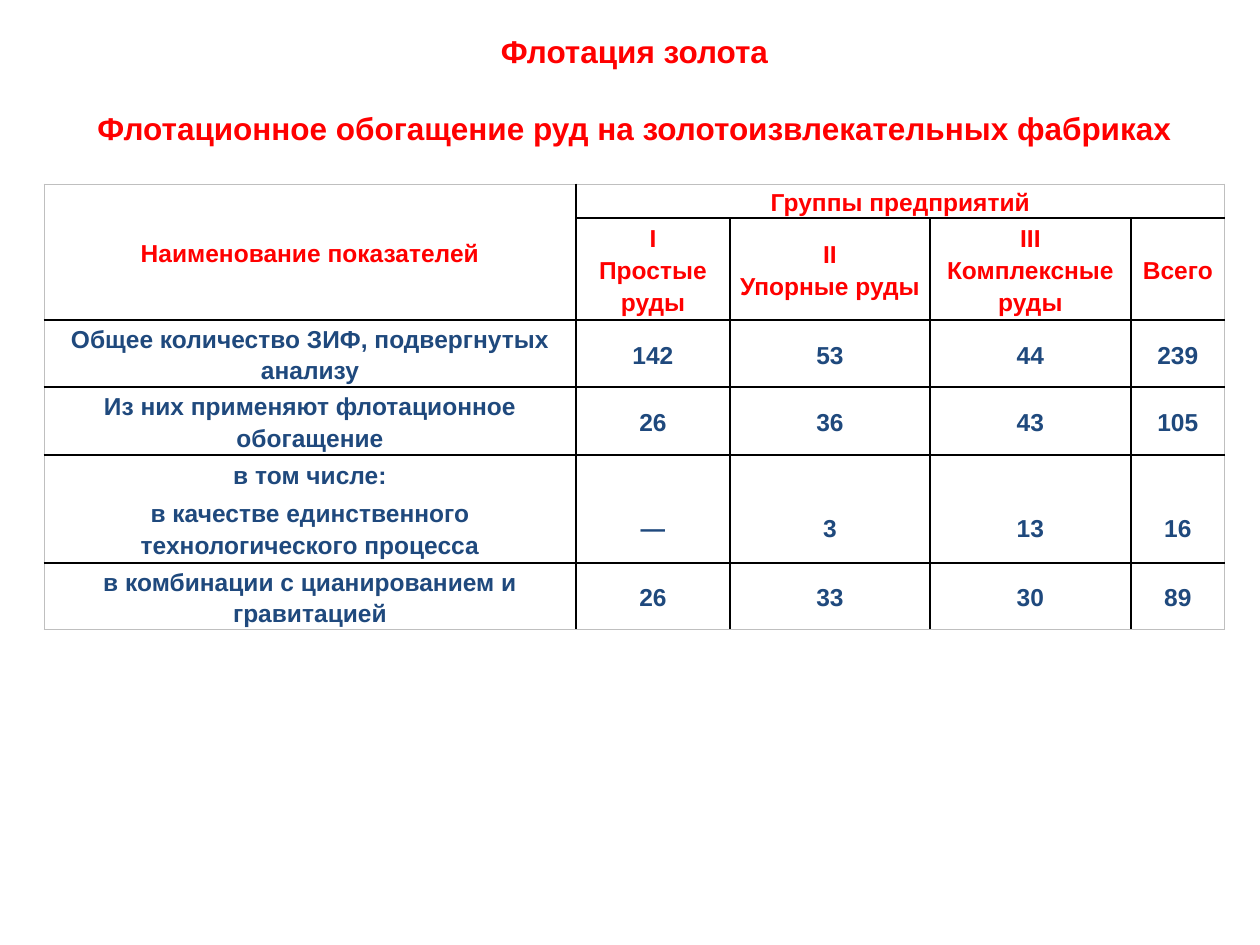
from lxml import etree
from pptx import Presentation
from pptx import util as u
from pptx.dml import color
from pptx.enum import text
from pptx.oxml import ns

PX = 914400 / 126
RED, BLUE, BLACK, GREY = "FF0000", "1F497D", "000000", "BFBFBF"


def px(n):
    return u.Emu(round(n * PX))


def write(frame, lines, size=14, tint=BLUE, lead=1.0, before=0, after=0):
    frame.text = lines[0]
    for line in lines[1:]:
        frame.add_paragraph().text = line
    for i, par in enumerate(frame.paragraphs):
        par.alignment = text.PP_ALIGN.CENTER
        par.line_spacing = lead
        par.space_before = u.Pt(before if i else 0)
        par.space_after = u.Pt(after)
        for br in par._p.findall(ns.qn("a:br")):
            etree.SubElement(br, ns.qn("a:rPr"), sz=str(size * 100), b="1")
        for run in par.runs:
            run.font.name = "Arial"
            run.font.size = u.Pt(size)
            run.font.bold = True
            run.font.color.rgb = color.RGBColor.from_string(tint)


prs = Presentation()
prs.slide_width, prs.slide_height = px(1260), px(945)
slide = prs.slides.add_slide(prs.slide_layouts[5])

title = slide.shapes.title
title.left, title.top, title.width, title.height = px(44), px(26), px(1181), px(127)
frame = title.text_frame
frame.word_wrap = True
frame.auto_size = text.MSO_AUTO_SIZE.NONE
frame.vertical_anchor = text.MSO_ANCHOR.TOP
write(frame, ["Флотация золота",
              "Флотационное обогащение руд на золотоизвлекательных фабриках"],
      size=18, tint=RED, before=22)

rows = [
    ["Наименование показателей", "Группы предприятий", "", "", ""],
    ["", "I\vПростые руды", "II\vУпорные руды", "III\vКомплексные руды", "Всего"],
    ["Общее количество ЗИФ, подвергнутых анализу", "142", "53", "44", "239"],
    ["Из них применяют флотационное обогащение", "26", "36", "43", "105"],
    ["в том числе:\nв качестве единственного технологического процесса",
     "—", "3", "13", "16"],
    ["в комбинации с цианированием и гравитацией", "26", "33", "30", "89"],
]
widths = [532, 154, 200, 201, 94]
heights = [34, 102, 67, 68, 108, 67]
split = 4

grid = slide.shapes.add_table(len(rows), len(widths), px(44), px(184),
                              px(sum(widths)), px(sum(heights))).table
grid.first_row = grid.horz_banding = False
for col, wide in zip(grid.columns, widths):
    col.width = px(wide)
for row, high in zip(grid.rows, heights):
    row.height = px(high)
grid.cell(0, 0).merge(grid.cell(1, 0))
grid.cell(0, 1).merge(grid.cell(0, 4))

for r, row in enumerate(rows):
    for c, words in enumerate(row):
        cell = grid.cell(r, c)
        if cell.is_spanned:
            continue
        cell.margin_left = cell.margin_right = px(9)
        cell.margin_top = px(37 if r == split and c else 0)
        cell.margin_bottom = 0
        cell.vertical_anchor = text.MSO_ANCHOR.MIDDLE
        write(cell.text_frame, words.split("\n"), tint=RED if r < 2 else BLUE,
              lead=1.15, after=3.8)
        high = cell.span_height if cell.is_merge_origin else 1
        wide = cell.span_width if cell.is_merge_origin else 1
        outer = {"lnL": c == 0, "lnR": c + wide == len(widths),
                 "lnT": r == 0, "lnB": r + high == len(rows)}
        props = cell._tc.get_or_add_tcPr()
        for side, edge in outer.items():
            line = etree.SubElement(props, ns.qn("a:" + side),
                                    w=str(u.Pt(0.5 if edge else 1)))
            fill = etree.SubElement(line, ns.qn("a:solidFill"))
            etree.SubElement(fill, ns.qn("a:srgbClr"), val=GREY if edge else BLACK)
        cell.fill.background()

prs.save("out.pptx")
